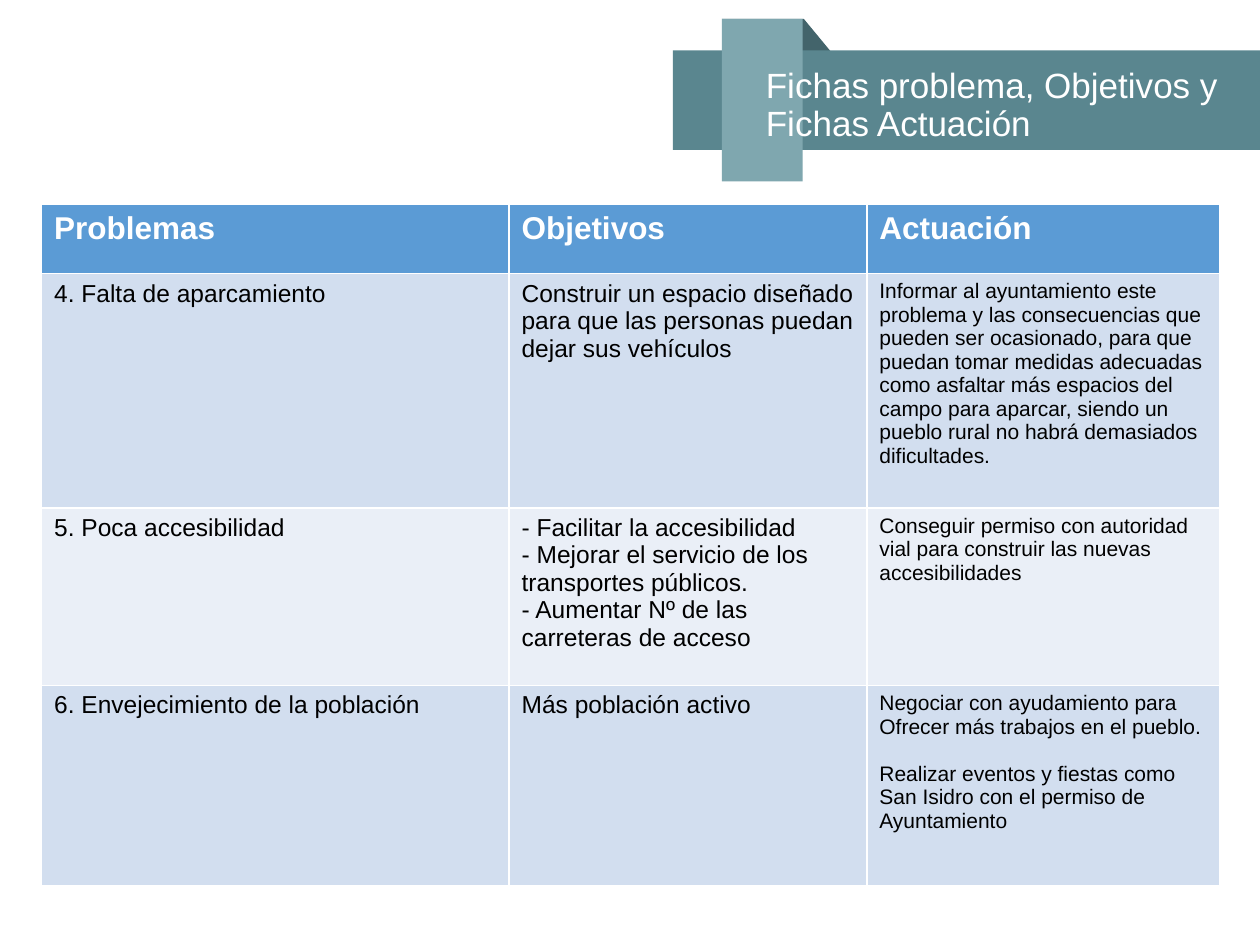
from pptx import Presentation
from pptx.dml.color import RGBColor
from pptx.enum.shapes import MSO_SHAPE as Kind
from pptx.enum.text import MSO_ANCHOR as Anchor
from pptx.util import Inches, Pt


def paint(fill, color):
    fill.solid()
    fill.fore_color.rgb = RGBColor.from_string(color)


def style(par, size, color, bold=False):
    par.font.name = "Arial"
    par.font.size = Pt(size)
    par.font.bold = bold
    par.font.color.rgb = RGBColor.from_string(color)


prs = Presentation()
prs.slide_width = Inches(10)
prs.slide_height = Inches(7.5)
slide = prs.slides.add_slide(prs.slide_layouts[6])
shapes = slide.shapes

pen = shapes.build_freeform(Inches(5.73), Inches(0.15))
pen.add_line_segments([(Inches(6.38), Inches(0.15)), (Inches(7), Inches(0.9))])
fold = pen.convert_to_shape()
band = shapes.add_shape(Kind.RECTANGLE, Inches(5.34), Inches(0.4), Inches(4.66), Inches(0.79))
strap = shapes.add_shape(Kind.RECTANGLE, Inches(5.73), Inches(0.15), Inches(0.64), Inches(1.29))
for part, color in ((fold, "43646B"), (band, "5A868F"), (strap, "7FA7AF")):
    paint(part.fill, color)
    part.line.fill.background()
    part.shadow.inherit = False

rows = [
    ["Problemas", "Objetivos", "Actuación"],
    [
        "4. Falta de aparcamiento",
        "Construir un espacio diseñado para que las personas puedan dejar sus vehículos",
        "Informar al ayuntamiento este problema y las consecuencias que pueden ser ocasionado, "
        "para que puedan tomar medidas adecuadas como asfaltar más espacios del campo para "
        "aparcar, siendo un pueblo rural no habrá demasiados dificultades.",
    ],
    [
        "5. Poca accesibilidad",
        "- Facilitar la accesibilidad\n"
        "- Mejorar el servicio de los transportes públicos.\n"
        "- Aumentar Nº de las carreteras de acceso",
        "Conseguir permiso con autoridad vial para construir las nuevas accesibilidades",
    ],
    [
        "6. Envejecimiento de la población",
        "Más población activo",
        "Negociar con ayudamiento para Ofrecer más trabajos en el pueblo.\n"
        "Realizar eventos y fiestas como San Isidro con el permiso de Ayuntamiento",
    ],
]
fills = ["5B9BD5", "D2DEEF", "EAEFF7", "D2DEEF"]
sizes = [14, 14, 12]
frame = shapes.add_table(4, 3, Inches(0.33), Inches(1.62), Inches(9.35), Inches(5.41))
table = frame.table
for col, width in zip(table.columns, (3.71, 2.84, 2.8)):
    col.width = Inches(width)
for row, height in zip(table.rows, (0.55, 1.86, 1.41, 1.59)):
    row.height = Inches(height)
for r, row in enumerate(rows):
    for c, text in enumerate(row):
        cell = table.cell(r, c)
        cell.text = text
        paint(cell.fill, fills[r])
        for par in cell.text_frame.paragraphs:
            if r == 0:
                style(par, 18, "FFFFFF", True)
            else:
                style(par, sizes[c], "000000")
table.cell(3, 2).text_frame.paragraphs[1].space_before = Pt(13.5)

title = shapes.add_textbox(Inches(5.98), Inches(0.44), Inches(3.88), Inches(0.66))
body = title.text_frame
body.word_wrap = True
body.vertical_anchor = Anchor.TOP
body.margin_left = body.margin_right = Inches(0.1)
body.margin_top = body.margin_bottom = Inches(0.1)
body.text = "Fichas problema, Objetivos y Fichas Actuación"
head = body.paragraphs[0]
head.line_spacing = 0.9
style(head, 20, "FFFFFF")

prs.save("out.pptx")
